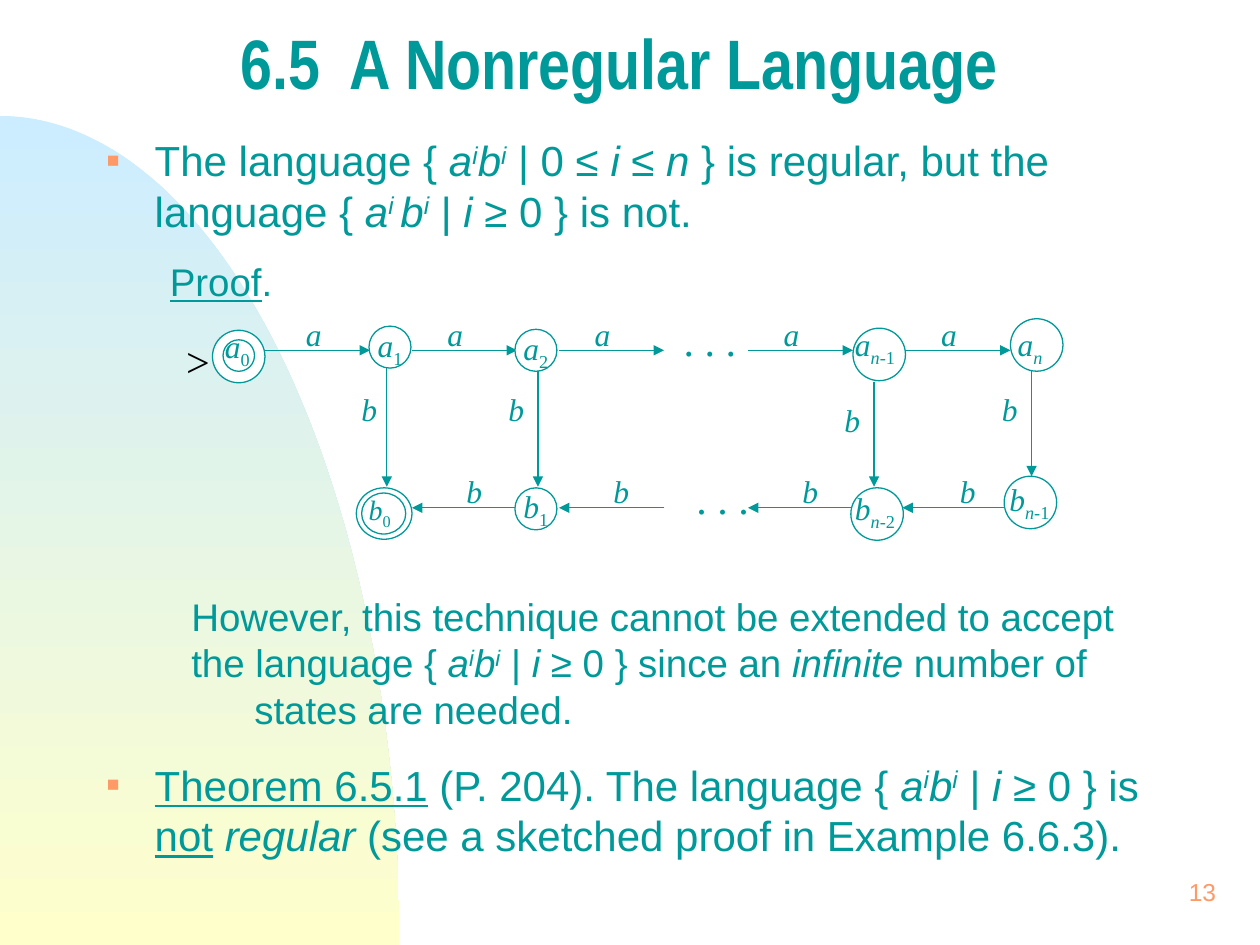
from math import cos, pi, sin

from lxml.etree import SubElement
from pptx import Presentation
from pptx.dml.color import RGBColor
from pptx.enum.shapes import MSO_CONNECTOR as Conn, MSO_SHAPE as Shp
from pptx.enum.text import MSO_ANCHOR as Anc, MSO_AUTO_SIZE as Fit, PP_ALIGN as Al
from pptx.oxml.ns import qn
from pptx.util import Inches, Pt

TEAL = RGBColor(0x00, 0x99, 0x99)
CORAL = RGBColor(0xFF, 0x99, 0x66)
INK = RGBColor(0x01, 0x00, 0x00)
WHITE = RGBColor(0xFF, 0xFF, 0xFF)
SKY = RGBColor(0xCC, 0xEC, 0xFF)
CREAM = RGBColor(0xFF, 0xFF, 0xCC)
SANS, SERIF, NARROW = "Arial", "Times New Roman", "Arial Narrow"
SHIFT = {"^": "30000", "_": "-25000"}

POWER = [("a", "i"), ("i", "i^"), ("b", "i"), ("i", "i^")]
ANY = POWER + [(" | ", ""), ("i ", "i"), ("≥ 0 } ", "")]


def col(n):
    return Inches(0.02 + n / 12)


def row(n):
    return Inches(0.03 + n / 12)


def span(n):
    return Inches(n / 12)


def write(para, runs, size, font=SANS, color=TEAL, bold=False):
    for text, style in runs:
        if text == "\n":
            para.add_line_break()
            continue
        run = para.add_run()
        run.text = text
        face = run.font
        face.name, face.size, face.bold = font, Pt(size), bold
        face.color.rgb = color
        face.italic, face.underline = "i" in style, "u" in style
        for mark in SHIFT:
            if mark in style:
                run._r.get_or_add_rPr().set("baseline", SHIFT[mark])


def indent(para, left, first):
    props = para._p.get_or_add_pPr()
    props.set("marL", str(Inches(left)))
    props.set("indent", str(Inches(first)))
    return props


def bullet(para):
    props = indent(para, 0.38, -0.38)
    tint = SubElement(SubElement(props, qn("a:buClr")), qn("a:srgbClr"))
    tint.set("val", str(CORAL))
    SubElement(props, qn("a:buSzPct")).set("val", "50000")
    SubElement(props, qn("a:buFont")).set("typeface", SANS)
    SubElement(props, qn("a:buChar")).set("char", "■")


def frame(slide, left, top, wide, high, wrap=True):
    text = slide.shapes.add_textbox(left, top, wide, high).text_frame
    text.word_wrap = wrap
    return text


def label(slide, x, y, runs, wide=4, size=18, color=TEAL):
    text = frame(slide, col(x), row(y), span(wide), span(size * 0.26), False)
    text.auto_size = Fit.SHAPE_TO_FIT_TEXT
    write(text.paragraphs[0], runs, size, SERIF, color)


def ring(slide, x, y, wide, high=None, runs=()):
    oval = slide.shapes.add_shape(Shp.OVAL, col(x), row(y), span(wide), span(high or wide))
    oval.shadow.inherit = False
    oval.fill.solid()
    oval.fill.fore_color.rgb = WHITE
    oval.line.color.rgb = TEAL
    oval.line.width = Pt(0.75)
    text = oval.text_frame
    text.word_wrap = False
    text.vertical_anchor = Anc.MIDDLE
    text.paragraphs[0].alignment = Al.CENTER
    write(text.paragraphs[0], runs, 18, SERIF)


def arrow(slide, x1, y1, x2, y2):
    link = slide.shapes.add_connector(Conn.STRAIGHT, col(x1), row(y1), col(x2), row(y2))
    link.line.color.rgb = TEAL
    link.line.width = Pt(0.75)
    SubElement(link.line._get_or_add_ln(), qn("a:tailEnd")).set("type", "triangle")
    SubElement(link._element.spPr, qn("a:effectLst"))


def arc(slide, wide, high, base):
    steps = [pi / 2 * n / 90 for n in range(91)]
    pts = [(Inches(wide * sin(t)), Inches(base - high * cos(t))) for t in steps]
    pen = slide.shapes.build_freeform(*pts[0])
    pen.add_line_segments(pts[1:] + [(0, Inches(base))], close=True)
    shape = pen.convert_to_shape()
    shape.shadow.inherit = False
    shape.line.fill.background()
    shape.fill.gradient()
    shape.fill.gradient_angle = 270
    for stop, tint in zip(shape.fill.gradient_stops, (SKY, CREAM)):
        stop.color.rgb = tint


def prose(slide):
    head = frame(slide, Inches(1.81), Inches(0.28), Inches(6.33), Inches(0.58))
    head.vertical_anchor = Anc.MIDDLE
    head.paragraphs[0].line_spacing = 0.7
    write(head.paragraphs[0], [("6.5  A Nonregular Language", "")], 40, NARROW, bold=True)

    body = frame(slide, Inches(0.75), Inches(1.02), Inches(8.9), Inches(6.08))
    claim, proof, thm = body.paragraphs[0], body.add_paragraph(), body.add_paragraph()
    proof.space_before, thm.space_before = Pt(13), Pt(260)
    bullet(claim)
    write(claim, [("The language { ", "")] + POWER + [
        (" | 0 ≤ ", ""), ("i ", "i"), ("≤ ", ""), ("n ", "i"),
        ("} is regular, but the ", ""), ("\n", ""), ("language { ", ""),
        ("a", "i"), ("i ", "i^"), ("b", "i"), ("i", "i^"),
        (" | ", ""), ("i ", "i"), ("≥ 0 } is not.", "")], 24)
    proof.level = 1
    indent(proof, 0.81, -0.31)
    write(proof, [("Proof", "u"), (".", "")], 22)
    bullet(thm)
    write(thm, [("Theorem 6.5.1", "u"), (" (P. 204). The language { ", "")] + ANY + [
        ("is ", ""), ("\n", ""), ("not", "u"), (" ", ""), ("regular", "i"),
        (" (see a sketched proof in Example 6.6.3).", "")], 24)

    note = frame(slide, Inches(1.42), Inches(4.66), Inches(7.91), Inches(1.2))
    write(note.paragraphs[0], [
        ("However, this technique cannot be extended to accept", ""), ("\n", ""),
        ("the language { ", "")] + ANY + [
        ("since an ", ""), ("infinite", "i"), (" number of", "")], 22)
    last = note.add_paragraph()
    indent(last, 0, 0.5)
    write(last, [("states are needed.", "")], 22)

    page = frame(slide, Inches(7.67), Inches(6.83), Inches(2.08), Inches(0.5))
    page.vertical_anchor = Anc.MIDDLE
    page.paragraphs[0].alignment = Al.RIGHT
    write(page.paragraphs[0], [("13", "")], 14, color=CORAL)


def graph(slide):
    for x in (25, 39, 53, 71, 86):
        arrow(slide, x, 33, x + 10, 33)
    for x1, x2 in ((49, 39), (63, 53), (81, 71), (95.4, 85.7)):
        arrow(slide, x1, 48, x2, 48)
    for x, top, end in ((36.6, 34.6, 46), (51, 35, 46), (83, 36, 46), (98, 35, 45)):
        arrow(slide, x, top, x, end)

    for name, sub, x, y in (("a", "1", 34.9, 30.7), ("a", "2", 48.8, 31),
                            ("b", "1", 48.8, 46.1)):
        ring(slide, x, y, 4, runs=[(name, "i"), (sub, "_")])
    for x, y, wide, high in ((20, 31.1, 5, 5), (21, 32, 3, 3), (81, 30.9, 5, 5),
                             (96, 30, 5, 5), (95.4, 45, 5, 5), (80.8, 46.1, 5, 5),
                             (33.7, 46.1, 5.3, 4.9), (34.2, 46.6, 4.2, 3.9)):
        ring(slide, x, y, wide, high)

    for x in (27.7, 41.2, 55.2, 73.2, 88.2):
        label(slide, x, 29, [("a", "i")])
    for x in (43, 57, 75, 90):
        label(slide, x, 44, [("b", "i")])
    for x, y in ((33, 36.2), (47, 36.2), (79, 37.2), (94, 36.2)):
        label(slide, x, y, [("b", "i")])
    for name, var, num, x, y, wide in (
            ("a", "", "0", 20, 30.2, 5), ("a", "n", "-1", 80, 30, 6.6),
            ("a", "n", "", 95.5, 30, 5), ("b", "n", "-1", 94.7, 44.8, 6.6),
            ("b", "n", "-2", 80, 45.6, 6.6)):
        subs = [(part, style) for part, style in ((var, "i_"), (num, "_")) if part]
        label(slide, x, y, [(name, "i")] + subs, wide)
    label(slide, 33.7, 46, [("b", "i"), ("0", "_")], 4.8, 16)
    label(slide, 16.3, 31, [(">", "")], 4.7, 24, INK)
    for x, y in ((63.7, 29), (64.9, 44)):
        label(slide, x, y, [(". . .", "")], 7.4, 24)


def main():
    deck = Presentation()
    deck.slide_width, deck.slide_height = Inches(10), Inches(7.5)
    slide = deck.slides.add_slide(deck.slide_layouts[6])
    arc(slide, 3.17, 6.58, 7.5)
    prose(slide)
    graph(slide)
    deck.save("out.pptx")


if __name__ == "__main__":
    main()
